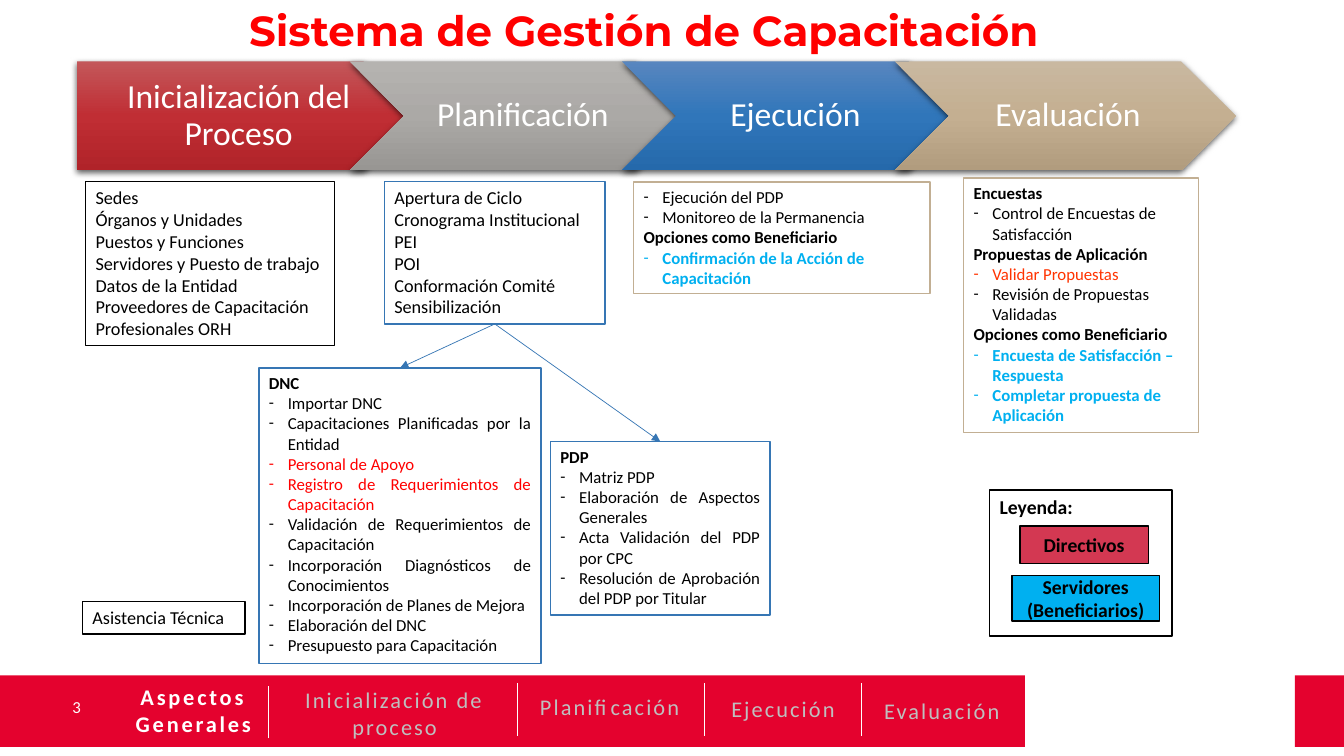
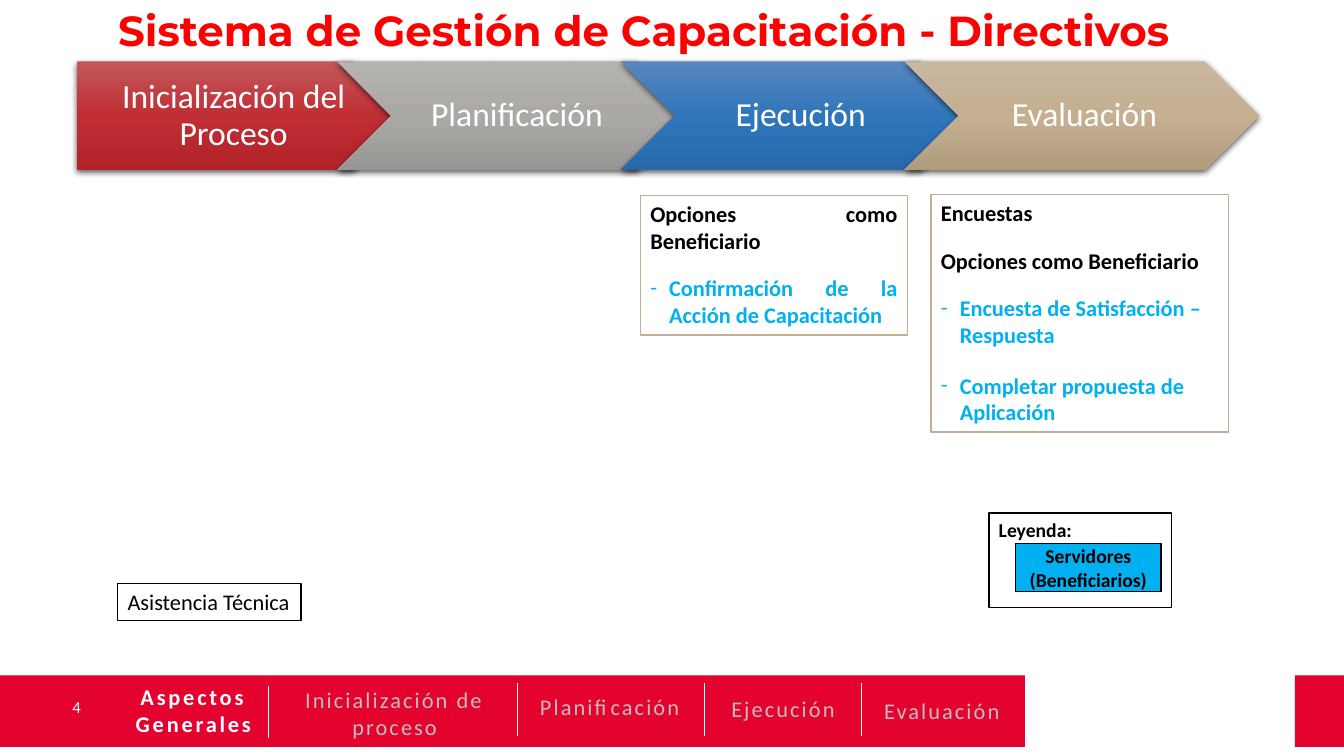
from copy import deepcopy

from lxml import etree
from pptx import Presentation
from pptx import util as u
from pptx.dml.color import RGBColor
from pptx.enum import shapes, text
from pptx.oxml.ns import qn

COLORS = {
    "black": "000000", "white": "FFFFFF", "band": "E4022E", "muted": "BFBFBF",
    "red": "FF0000", "orange": "FF3300", "sky": "00B0F0", "chip": "D33852",
    "blue": "3676B4", "tan": "C2AF93",
}
GRADIENTS = {
    "Inicialización del Proceso": ("C3575A", "C02E34", "B02329"),
    "Planificación": ("B5B3B0", "ABA9A6", "989693"),
    "Ejecución": ("5886BF", "3076BA", "2569AB"),
    "Evaluación": ("C9B8A0", "C4AF91", "B19C7E"),
}
LEFT, CENTER, RIGHT, JUSTIFY = (
    text.PP_ALIGN.LEFT, text.PP_ALIGN.CENTER, text.PP_ALIGN.RIGHT, text.PP_ALIGN.JUSTIFY)
MIDDLE = text.MSO_ANCHOR.MIDDLE
SHAPE = shapes.MSO_SHAPE
HANGING = u.Pt(13.5)

HEAD = {"bold": True}
ITEM = {"bullet": True}
JUSTIFIED = {"bullet": True, "align": JUSTIFY}
STAFF = {**JUSTIFIED, "color": "red"}
MANAGER = {**ITEM, "color": "orange"}
BENEFICIARY = {**ITEM, **HEAD, "color": "sky"}


def rgb(name):
    return RGBColor.from_string(COLORS.get(name, name))


def lines(style, *texts):
    return [(line, style) for line in texts]


class Board:
    def __init__(self):
        self.deck = Presentation()
        self.deck.slide_width, self.deck.slide_height = u.Pt(960), u.Pt(540)
        self.page = None

    def start(self, title, number):
        self.page = self.deck.slides.add_slide(self.deck.slide_layouts[6])
        for left, width in ((0, 732.2), (925, 35)):
            self.box((left, 482.4, width, 51.2), fill="band")
        self.label((13, 490.4, 51.8, 28.8), str(number), anchor=MIDDLE,
                   size=12, color="white", align=RIGHT)
        self.label((6.5, 3.6, 907, 41), title, size=30, font="Montserrat",
                   color="red", bold=True, align=CENTER, spacing=0.9)
        self.navigation()

    def navigation(self):
        muted = {"size": 16, "color": "muted", "align": CENTER, "tracking": 1.5}
        active = {**muted, "color": "white", "bold": True, "tracking": 2}
        self.label((84.2, 484.6, 108, 46), "Aspectos Generales", **active)
        self.label((193.7, 486.7, 176.4, 46), "Inicialización de proceso", **muted)
        for name, left, top, width in (("Planificación", 375.8, 491.8, 119.5),
                                       ("Ejecución", 514, 493.2, 90.7),
                                       ("Evaluación", 622, 494.6, 101.5)):
            self.label((left, top, width, 26.6), name, wrap=False, **muted)
        for x, top in ((191.5, 490.3), (369.4, 488.2), (503.3, 488.2), (615.6, 488.2)):
            self.line((x, top + 37.2), (x, top), "white")

    def process(self, first_width, width):
        left, height, overlap = 55, 77.8, 0.2 * width
        for index, (name, colors) in enumerate(GRADIENTS.items()):
            kind = SHAPE.CHEVRON if index else SHAPE.PENTAGON
            step = width if index else first_width
            arrow = self.box((left, 43.9, step, height), kind=kind)
            self.gradient(arrow, colors)
            self.shadow(arrow)
            self.put_text(arrow, name, anchor=MIDDLE, margins=(7.2 if index else 10, 5, 3, 5),
                          size=24, color="white", align=CENTER, spacing=0.9)
            left += step - overlap

    def gradient(self, shape, colors):
        fill = shape.fill
        fill.gradient()
        fill.gradient_angle = 270
        stops = shape._element.spPr.find(".//" + qn("a:gsLst"))
        stops.insert(1, deepcopy(stops[0]))
        for stop, color, position in zip(fill.gradient_stops, colors, (0, 0.5, 1)):
            stop.color.rgb = rgb(color)
            stop.position = position

    def shadow(self, shape):
        effects = shape._element.spPr.find(qn("a:effectLst"))
        outer = etree.SubElement(effects, qn("a:outerShdw"), blurRad=str(u.Pt(4.5)),
                                 dist=str(u.Pt(1.5)), dir="5400000", algn="ctr",
                                 rotWithShape="0")
        color = etree.SubElement(outer, qn("a:srgbClr"), val=COLORS["black"])
        etree.SubElement(color, qn("a:alpha"), val="63000")

    def box(self, place, content=None, fill="white", line=None, kind=SHAPE.RECTANGLE, **style):
        shape = self.page.shapes.add_shape(kind, *map(u.Pt, place))
        shape.shadow.inherit = False
        shape.fill.solid()
        shape.fill.fore_color.rgb = rgb(fill)
        if line:
            shape.line.color.rgb = rgb(line)
            shape.line.width = u.Pt(1)
        else:
            shape.line.fill.background()
        if content:
            self.put_text(shape, content, **style)
        return shape

    def label(self, place, content, **style):
        self.put_text(self.page.shapes.add_textbox(*map(u.Pt, place)), content, **style)

    def put_text(self, shape, content, wrap=True, anchor=text.MSO_ANCHOR.TOP,
                 margins=(7.2, 3.6, 7.2, 3.6), **style):
        frame = shape.text_frame
        left, top, right, bottom = map(u.Pt, margins)
        settings = {"word_wrap": wrap, "vertical_anchor": anchor, "margin_left": left,
                    "margin_top": top, "margin_right": right, "margin_bottom": bottom}
        for name, value in settings.items():
            setattr(frame, name, value)
        if isinstance(content, str):
            content = [(content, {})]
        for index, (words, own) in enumerate(content):
            para = frame.add_paragraph() if index else frame.paragraphs[0]
            self.paragraph(para, words, **{**style, **own})

    def paragraph(self, para, words, size=12, font="Calibri", color="black", bold=False,
                  align=LEFT, bullet=False, before=0, spacing=None, tracking=0):
        if bullet:
            properties = para._p.get_or_add_pPr()
            properties.set("marL", str(HANGING))
            properties.set("indent", str(-HANGING))
            etree.SubElement(properties, qn("a:buFont"), typeface=font)
            etree.SubElement(properties, qn("a:buChar"), char="-")
        layout = {"alignment": align, "line_spacing": spacing}
        if before:
            layout["space_before"] = u.Pt(before)
        for name, value in layout.items():
            setattr(para, name, value)
        span = para.add_run()
        span.text = words
        for name, value in {"size": u.Pt(size), "name": font, "bold": bold}.items():
            setattr(span.font, name, value)
        span.font.color.rgb = rgb(color)
        if tracking:
            span._r.get_or_add_rPr().set("spc", str(int(tracking * 100)))

    def line(self, start, end, color):
        line = self.page.shapes.add_connector(
            shapes.MSO_CONNECTOR.STRAIGHT, *map(u.Pt, (*start, *end)))
        line.line.color.rgb = rgb(color)
        line.line.width = u.Pt(0.5)
        etree.SubElement(line._element.spPr, qn("a:effectLst"))
        return line

    def arrow(self, source, target):
        arrow = self.line((0, 0), (1, 1), "blue")
        arrow.begin_connect(source, 2)
        arrow.end_connect(target, 0)
        outline = arrow._element.spPr.find(qn("a:ln"))
        etree.SubElement(outline, qn("a:tailEnd"), type="triangle")

    def legend(self, place, chips):
        self.box(place, "Leyenda:", line="black", size=14, bold=True)
        for chip_place, fill, words in chips:
            self.box(chip_place, lines({}, *words), fill=fill, line="black", anchor=MIDDLE,
                     size=14, bold=True, align=CENTER)


def general_slide(board):
    board.start("Sistema de Gestión de Capacitación", 3)
    board.process(243.4, 243.4)
    board.box((61.2, 129.6, 177.8, 117.4), lines(
        {}, "Sedes", "Órganos y Unidades", "Puestos y Funciones",
        "Servidores y Puesto de trabajo", "Datos de la Entidad",
        "Proveedores de Capacitación", "Profesionales ORH"), line="black", size=13)
    planning = board.box((274.6, 129.6, 157.7, 101.8), lines(
        {}, "Apertura de Ciclo", "Cronograma Institucional", "PEI", "POI",
        "Conformación Comité", "Sensibilización"), line="blue", size=13)
    needs = board.box((185, 262.8, 201.6, 211), [
        ("DNC", HEAD),
        *lines(JUSTIFIED, "Importar DNC", "Capacitaciones Planificadas por la Entidad"),
        *lines(STAFF, "Personal de Apoyo", "Registro de Requerimientos de Capacitación"),
        *lines(JUSTIFIED, "Validación de Requerimientos de Capacitación",
               "Incorporación Diagnósticos de Conocimientos",
               "Incorporación de Planes de Mejora", "Elaboración del DNC",
               "Presupuesto para Capacitación")], line="blue")
    plan = board.box((393.1, 315.4, 157, 123.8), [
        ("PDP", HEAD),
        *lines(JUSTIFIED, "Matriz PDP", "Elaboración de Aspectos Generales",
               "Acta Validación del PDP por CPC",
               "Resolución de Aprobación del PDP por Titular")], line="blue")
    board.box((452.6, 129.9, 211.7, 79.9), [
        *lines(ITEM, "Ejecución del PDP", "Monitoreo de la Permanencia"),
        ("Opciones como Beneficiario", HEAD),
        ("Confirmación de la Acción de Capacitación", BENEFICIARY)], line="tan")
    for target in (needs, plan):
        board.arrow(planning, target)
    board.box((59, 429.6, 116, 23.2), "Asistencia Técnica", line="black", size=13)
    board.box((688.3, 127.2, 167.8, 181.6), [
        ("Encuestas", HEAD),
        ("Control de Encuestas de Satisfacción", ITEM),
        ("Propuestas de Aplicación", HEAD),
        ("Validar Propuestas", MANAGER),
        ("Revisión de Propuestas Validadas", ITEM),
        ("Opciones como Beneficiario", HEAD),
        *lines(BENEFICIARY, "Encuesta de Satisfacción – Respuesta",
               "Completar propuesta de Aplicación")], line="tan")
    board.legend((707, 349.9, 130.3, 104.4), [
        ((728.6, 375.8, 91.6, 26.6), "chip", ["Directivos"]),
        ((723, 411.1, 105.1, 32.4), "sky", ["Servidores", "(Beneficiarios)"])])


def managers_slide(board):
    board.start("Sistema de Gestión de Capacitación - Directivos", 4)
    board.process(236.2, 253.4)
    board.box((457.4, 139.6, 190.8, 99.6), [
        ("Opciones como Beneficiario", HEAD),
        ("Confirmación de la Acción de Capacitación", {**BENEFICIARY, "before": 14.6})],
        line="tan", size=16, align=JUSTIFY)
    board.box((665, 139, 212.4, 169.6), [
        ("Encuestas", HEAD),
        ("Opciones como Beneficiario", {**HEAD, "before": 14.6}),
        ("Encuesta de Satisfacción – Respuesta", {**BENEFICIARY, "before": 14.6}),
        ("Completar propuesta de Aplicación", {**BENEFICIARY, "before": 17})],
        line="tan", size=16)
    board.box((84, 416.9, 131, 26.6), "Asistencia Técnica", line="black", size=16)
    board.legend((706.3, 366.5, 130.3, 67.7), [
        ((725.5, 388.3, 103.9, 34.4), "sky", ["Servidores", "(Beneficiarios)"])])


def main():
    board = Board()
    general_slide(board)
    managers_slide(board)
    board.deck.save("out.pptx")


if __name__ == "__main__":
    main()
